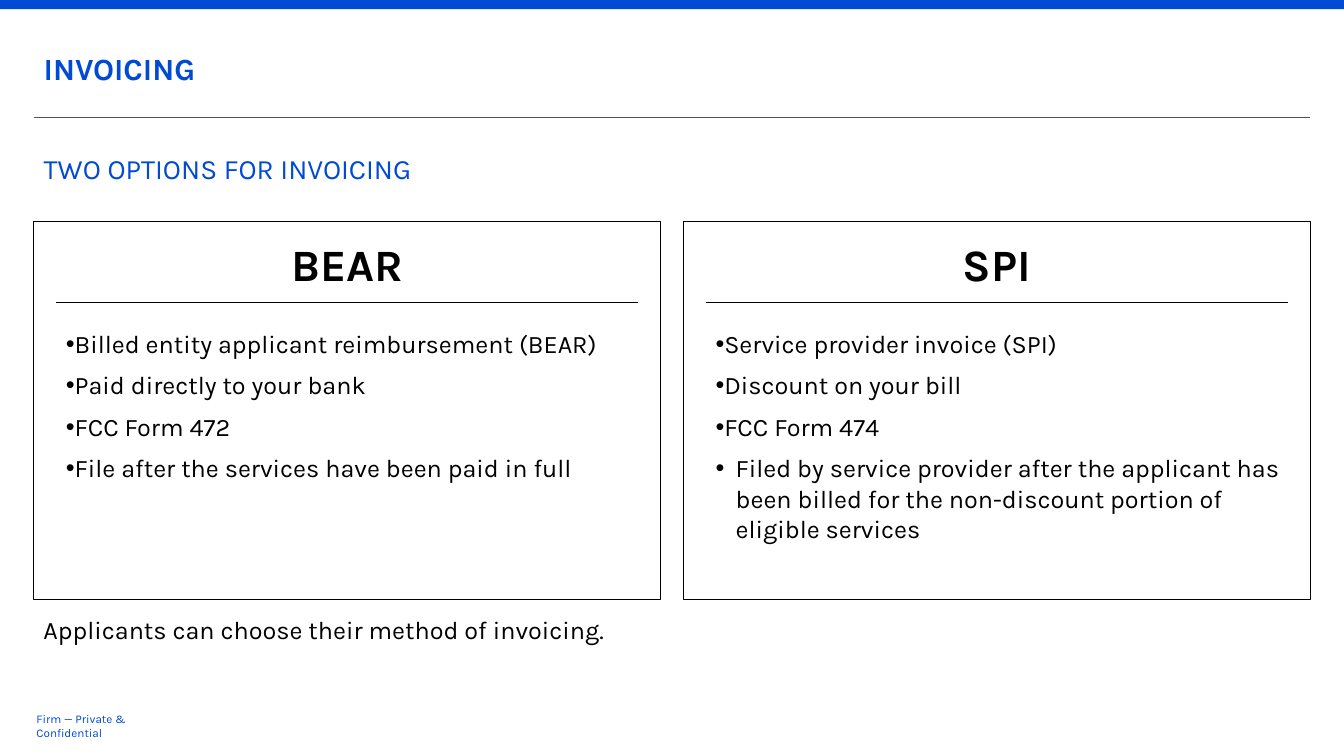
from lxml.etree import SubElement
from pptx import Presentation
from pptx.dml.color import RGBColor
from pptx.enum.shapes import MSO_CONNECTOR as Connector, MSO_SHAPE as Preset
from pptx.enum.text import MSO_ANCHOR as Anchor, MSO_AUTO_SIZE as AutoSize, PP_ALIGN as Align
from pptx.oxml.ns import qn
from pptx.util import Pt

BLUE = RGBColor(0x00, 0x4A, 0xD4)
BLACK = RGBColor(0x00, 0x00, 0x00)
WHITE = RGBColor(0xFF, 0xFF, 0xFF)
GRAY = RGBColor(0x50, 0x50, 0x50)

LEFT, PANEL_WIDTH, PANEL_STEP = 24, 448, 464
HANG = 14.4
OPTIONS = [
    ("BEAR", [
        ("Billed entity applicant reimbursement (BEAR)", 0),
        ("Paid directly to your bank", 0),
        ("FCC Form 472", 0),
        ("File after the services have been paid in full", 0),
    ]),
    ("SPI", [
        ("Service provider invoice (SPI)", 0),
        ("Discount on your bill", 0),
        ("FCC Form 474", 0),
        ("Filed by service provider after the applicant has been billed "
         "for the non-discount portion of eligible services", HANG),
    ]),
]


class Page:
    font = "Karla"

    def __init__(self, slide):
        self.slide = slide
        self.shapes = slide.shapes

    def style(self, paragraph, size, color, bold=False, align=Align.LEFT):
        paragraph.alignment = align
        for span in paragraph.runs:
            span.font.name = self.font
            span.font.size = Pt(size)
            span.font.bold = bold
            span.font.color.rgb = color

    def indent(self, paragraph, margin, hang, bullet=None):
        properties = paragraph._p.get_or_add_pPr()
        properties.set("marL", str(Pt(margin)))
        properties.set("indent", str(-Pt(hang)))
        if bullet:
            SubElement(properties, qn("a:buFont"), typeface="Arial")
            SubElement(properties, qn("a:buChar"), char=bullet)
        else:
            SubElement(properties, qn("a:buNone"))

    def heading(self, box, text, top, height, size, bold=False):
        box.left, box.top = Pt(LEFT), Pt(top)
        box.width, box.height = Pt(912), Pt(height)
        frame = box.text_frame
        frame.text = text
        frame.auto_size = AutoSize.NONE
        frame.vertical_anchor = Anchor.MIDDLE
        paragraph = frame.paragraphs[0]
        paragraph.space_before = Pt(0)
        self.style(paragraph, size, BLUE, bold)
        self.indent(paragraph, 0, 0)

    def text(self, text, left, top, width, height, size,
             color=BLACK, bold=False, align=Align.LEFT):
        box = self.shapes.add_textbox(Pt(left), Pt(top), Pt(width), Pt(height))
        frame = box.text_frame
        frame.word_wrap = True
        frame.text = text
        for paragraph in frame.paragraphs:
            self.style(paragraph, size, color, bold, align)
        return frame

    def bullets(self, items, left, top, width, height):
        text = "\n".join(item for item, margin in items)
        frame = self.text(text, left, top, width, height, 18)
        for paragraph, (item, margin) in zip(frame.paragraphs, items):
            paragraph.space_after = Pt(8)
            self.indent(paragraph, margin, HANG, "•")

    def rectangle(self, left, top, width, height, fill, outline=None):
        box = self.shapes.add_shape(
            Preset.RECTANGLE, Pt(left), Pt(top), Pt(width), Pt(height))
        box.shadow.inherit = False
        box.fill.solid()
        box.fill.fore_color.rgb = fill
        if outline is None:
            box.line.fill.background()
        else:
            box.line.color.rgb = outline
            box.line.width = Pt(0.75)

    def rule(self, left, top, width, color):
        line = self.shapes.add_connector(
            Connector.STRAIGHT, Pt(left), Pt(top), Pt(left + width), Pt(top))
        line.line.color.rgb = color
        line.line.width = Pt(0.75)
        SubElement(line._element.spPr, qn("a:effectLst"))

    def option(self, left, name, items):
        self.rectangle(left, 158.4, PANEL_WIDTH, 270, WHITE, BLACK)
        self.text(name, left, 165.6, PANEL_WIDTH, 46, 32,
                  bold=True, align=Align.CENTER)
        self.rule(left + 16, 216, PANEL_WIDTH - 32, BLACK)
        self.bullets(items, left + 16, 231, PANEL_WIDTH - 31, 140)


def main():
    deck = Presentation()
    deck.slide_width, deck.slide_height = Pt(960), Pt(540)
    page = Page(deck.slides.add_slide(deck.slide_layouts[1]))

    page.rectangle(0, 0, 960, 6.5, BLUE)
    page.rule(LEFT, 84, 912, GRAY)
    page.heading(page.slide.placeholders[1], "INVOICING", 24, 50, 22, bold=True)
    page.heading(page.shapes.title, "TWO OPTIONS FOR INVOICING", 96, 48, 20)

    for index, (name, items) in enumerate(OPTIONS):
        page.option(LEFT + index * PANEL_STEP, name, items)

    page.text("Applicants can choose their method of invoicing.",
              LEFT, 435, PANEL_WIDTH, 29, 18)
    footer = page.text("Firm — Private & Confidential",
                       LEFT, 511, 112, 14.4, 8.4, BLUE)
    footer.vertical_anchor = Anchor.MIDDLE
    footer.margin_left = footer.margin_right = Pt(2)
    footer.margin_top = footer.margin_bottom = Pt(2)

    deck.save("out.pptx")


if __name__ == "__main__":
    main()
